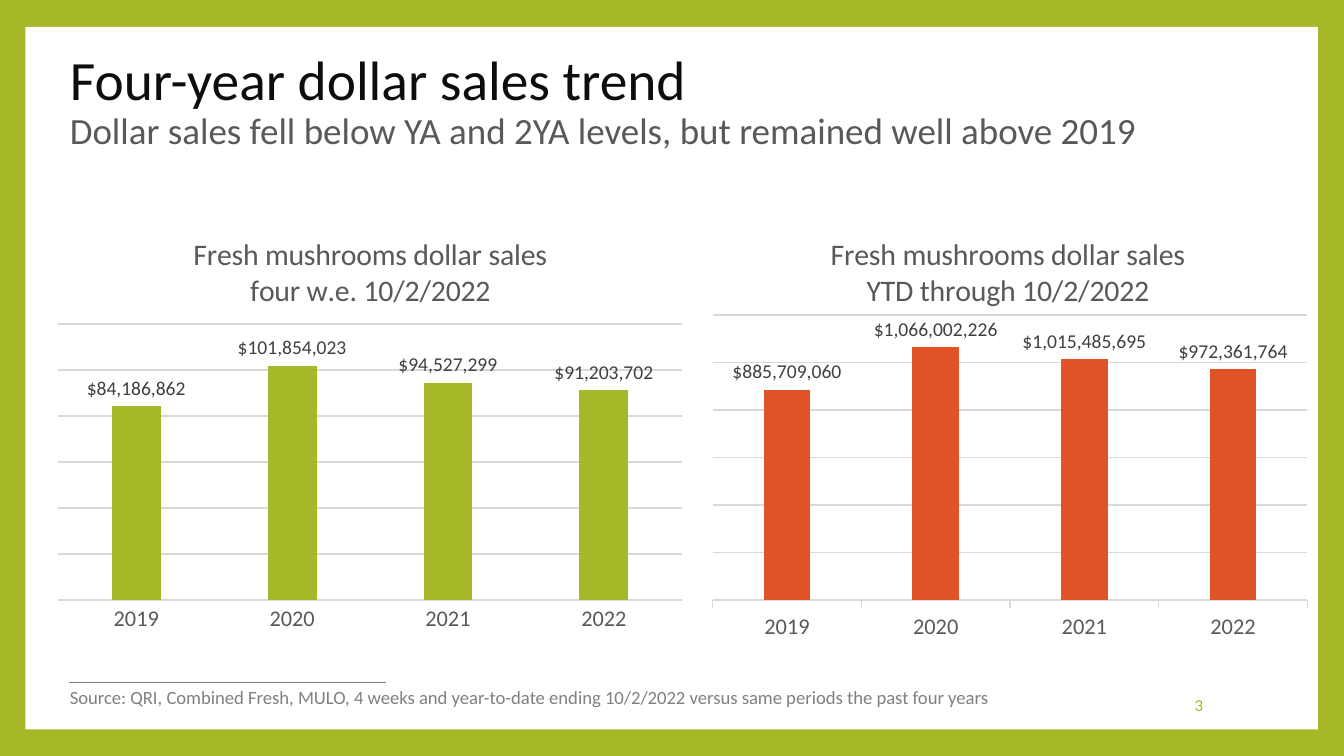
from lxml import etree
from pptx import Presentation
from pptx.chart.data import CategoryChartData
from pptx.dml.color import RGBColor
from pptx.enum.chart import XL_CHART_TYPE, XL_LABEL_POSITION, XL_TICK_MARK
from pptx.enum.shapes import MSO_CONNECTOR, MSO_SHAPE
from pptx.enum.text import MSO_ANCHOR, PP_ALIGN
from pptx.oxml import parse_xml
from pptx.oxml.ns import qn
from pptx.util import Cm, Pt

COLUMN = XL_CHART_TYPE.COLUMN_CLUSTERED
OUTSIDE_END = XL_LABEL_POSITION.OUTSIDE_END
TICK_NONE, TICK_OUT = XL_TICK_MARK.NONE, XL_TICK_MARK.OUTSIDE
RECT, STRAIGHT = MSO_SHAPE.RECTANGLE, MSO_CONNECTOR.STRAIGHT
MIDDLE = MSO_ANCHOR.MIDDLE
LEFT, RIGHT, CENTER = PP_ALIGN.LEFT, PP_ALIGN.RIGHT, PP_ALIGN.CENTER
GREEN, ORANGE, GRAY, DARK, PALE = "A6B727", "DF5327", "808080", "595959", "D9D9D9"
CHART_NS = "http://schemas.openxmlformats.org/drawingml/2006/chart"


def set_font(font, size, color):
    font.name = "Calibri"
    font.size = Pt(size)
    font.bold = False
    font.color.rgb = RGBColor.from_string(color)


def make_layout(target, **values):
    items = "".join(f'<c:{k} val="{v}"/>' for k, v in values.items())
    return parse_xml(
        f'<c:layout xmlns:c="{CHART_NS}"><c:manualLayout>{target}'
        f'<c:xMode val="edge"/><c:yMode val="edge"/>{items}</c:manualLayout></c:layout>'
    )


prs = Presentation()
prs.slide_width, prs.slide_height = Cm(25.4), Cm(14.29)
s = prs.slides.add_slide(prs.slide_layouts[6])
s.background.fill.solid()
s.background.fill.fore_color.rgb = RGBColor.from_string(GREEN)

panel = s.shapes.add_shape(RECT, Cm(0.48), Cm(0.51), Cm(24.43), Cm(13.28))
panel.shadow.inherit = False
panel.fill.solid()
panel.fill.fore_color.rgb = RGBColor.from_string("FFFFFF")
panel.line.fill.background()

rule = s.shapes.add_connector(STRAIGHT, Cm(1.3), Cm(12.9), Cm(7.29), Cm(12.9))
rule.line.color.rgb = RGBColor.from_string(GRAY)
rule.line.width = Pt(0.79)
etree.SubElement(rule._element.spPr, qn("a:effectLst"))

title = s.shapes.add_textbox(Cm(1.07), Cm(0.94), Cm(24), Cm(2.01))
tf = title.text_frame
tf.word_wrap = True
tf.vertical_anchor = MIDDLE
p = tf.paragraphs[0]
p.line_spacing = 0.9
r = p.add_run()
r.text = "Four-year dollar sales trend"
set_font(r.font, 29.7, "0D0D0D")
p.add_line_break()
r = p.add_run()
r.text = "Dollar sales fell below YA and 2YA levels, but remained well above 2019"
set_font(r.font, 19.8, DARK)

source = (
    "Source: QRI, Combined Fresh, MULO, 4 weeks and year-to-date ending 10/2/2022 "
    "versus same periods the past four years"
)
for text, x, y, w, h, size, color, align, wrap in [
    ("3", 19.43, 12.95, 3.56, 0.76, 9, GREEN, RIGHT, True),
    (source, 1.07, 12.83, 18.14, 0.69, 10, GRAY, LEFT, False),
]:
    tf = s.shapes.add_textbox(Cm(x), Cm(y), Cm(w), Cm(h)).text_frame
    tf.word_wrap = wrap
    tf.vertical_anchor = MIDDLE
    p = tf.paragraphs[0]
    p.text = text
    p.alignment = align
    set_font(p.font, size, color)

charts = [
    ("four w.e. 10/2/2022", 1.09, 11.81, GREEN, TICK_NONE, 20_000_000,
     (84186862, 101854023, 94527299, 91203702), (0, 0.26, 1, 0.62)),
    ("YTD through 10/2/2022", 13.11, 11.96, ORANGE, TICK_OUT, 200_000_000,
     (885709060, 1066002226, 1015485695, 972361764), (0.03, 0.24, 0.94, 0.64)),
]
for period, x, width, color, tick, unit, sales, (px, py, pw, ph) in charts:
    data = CategoryChartData(number_format="\\$#,##0")
    data.categories = ["2019", "2020", "2021", "2022"]
    data.add_series("Series 1", sales)
    chart = s.shapes.add_chart(COLUMN, Cm(x), Cm(3.94), Cm(width), Cm(8.41), data).chart
    set_font(chart.font, 10, "000000")
    chart.has_legend = False

    chart.has_title = True
    tf = chart.chart_title.text_frame
    tf.text = f"Fresh mushrooms dollar sales\n{period}"
    for p in tf.paragraphs:
        p.alignment = CENTER
        set_font(p.font, 16, DARK)
    chart.chart_title.include_in_layout = False
    title_xml = chart.chart_title._element
    for old in title_xml.findall(qn("c:layout")):
        title_xml.remove(old)
    title_xml.find(qn("c:tx")).addnext(make_layout("", x=0.21, y=0.05))

    axis = chart.category_axis
    axis.major_tick_mark = tick
    axis.minor_tick_mark = TICK_NONE
    axis.format.line.color.rgb = RGBColor.from_string(PALE)
    axis.format.line.width = Pt(0.75)
    set_font(axis.tick_labels.font, 12, DARK)

    axis = chart.value_axis
    axis.visible = False
    axis.minimum_scale, axis.maximum_scale, axis.major_unit = 0, 6 * unit, unit
    axis.has_major_gridlines = True
    axis.major_gridlines.format.line.color.rgb = RGBColor.from_string(PALE)
    axis.major_gridlines.format.line.width = Pt(0.75)

    plot = chart.plots[0]
    plot.gap_width, plot.overlap = 219, -27
    plot.vary_by_categories = False
    fill = plot.series[0].format.fill
    fill.solid()
    fill.fore_color.rgb = RGBColor.from_string(color)
    plot.has_data_labels = True
    labels = plot.data_labels
    labels.show_value = True
    labels.position = OUTSIDE_END
    labels.number_format = "\\$#,##0"
    labels.number_format_is_linked = False
    set_font(labels.font, 10.5, "404040")

    area = plot._element.getparent()
    for old in area.findall(qn("c:layout")):
        area.remove(old)
    area.insert(0, make_layout('<c:layoutTarget val="inner"/>', x=px, y=py, w=pw, h=ph))

prs.save("out.pptx")
